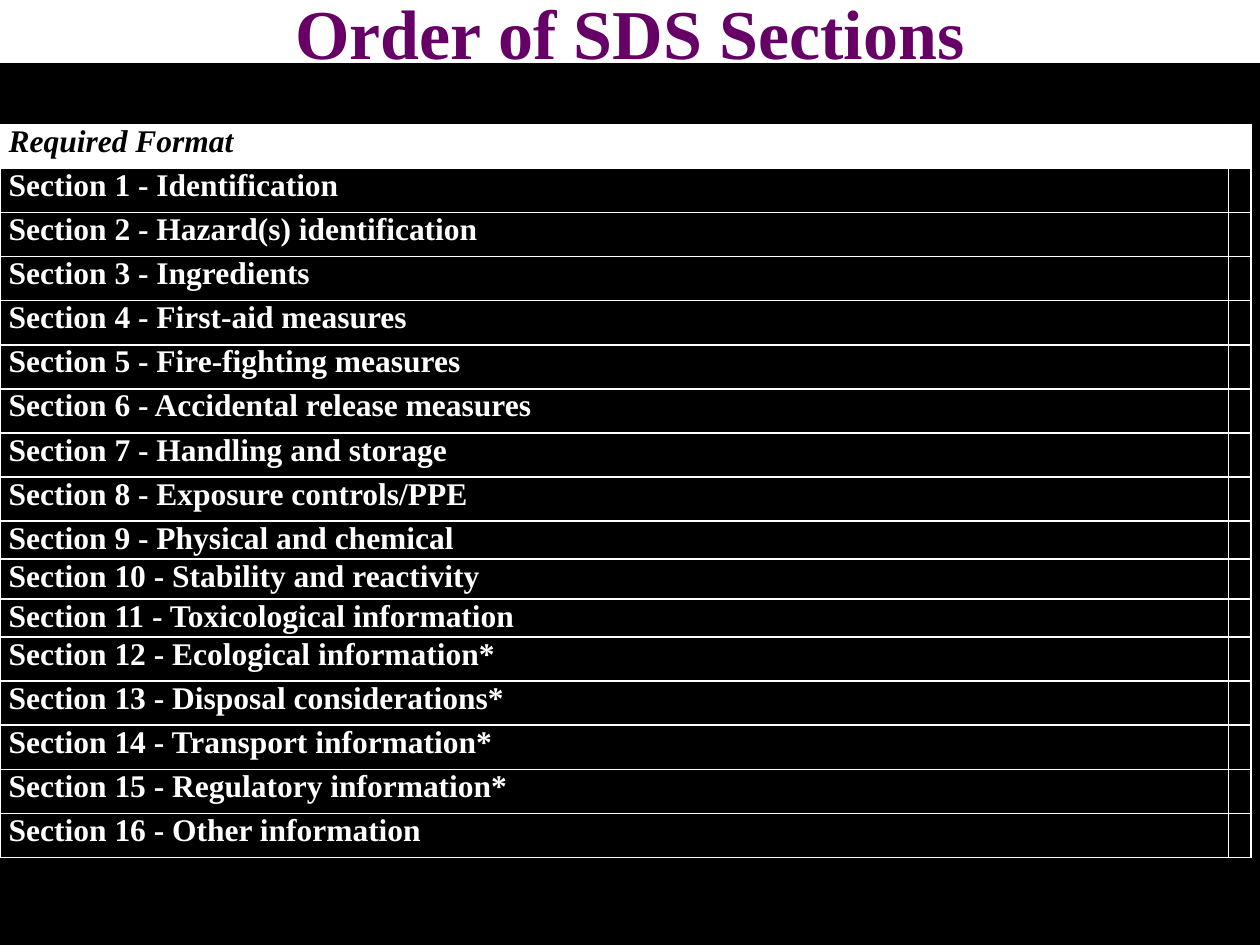
"""Build the slide that lists the order of SDS sections."""
from dataclasses import dataclass

from lxml import etree
from pptx import Presentation
from pptx.dml.color import RGBColor
from pptx.enum.shapes import MSO_SHAPE
from pptx.enum.text import MSO_ANCHOR, PP_ALIGN
from pptx.oxml.ns import qn
from pptx.util import Pt

RECTANGLE = MSO_SHAPE.RECTANGLE
MIDDLE = MSO_ANCHOR.MIDDLE
CENTER = PP_ALIGN.CENTER

SECTIONS = [
    "Identification",
    "Hazard(s) identification",
    "Ingredients",
    "First-aid measures",
    "Fire-fighting measures",
    "Accidental release measures",
    "Handling and storage",
    "Exposure controls/PPE",
    "Physical and chemical",
    "Stability and reactivity",
    "Toxicological information",
    "Ecological information*",
    "Disposal considerations*",
    "Transport information*",
    "Regulatory information*",
    "Other information",
]
ROW_HEIGHT = 25.2
TIGHT_ROWS = {9: 21.6, 10: 23, 11: 21.6}
COLUMN_WIDTHS = [702, 12.4]


@dataclass(frozen=True)
class Theme:
    font: str = "Times New Roman"
    black: str = "000000"
    white: str = "FFFFFF"
    purple: str = "660066"
    title_size: float = 40
    body_size: float = 18
    border: float = 1
    side_inset: float = 5


class SlideBuilder:
    def __init__(self, slide, theme):
        self.slide = slide
        self.theme = theme

    def paint(self, fill, color):
        fill.solid()
        fill.fore_color.rgb = RGBColor.from_string(color)

    def background(self, color):
        self.paint(self.slide.background.fill, color)

    def set_text(self, frame, text, size, color, italic=False):
        paragraph = frame.paragraphs[0]
        paragraph.text = text
        font = paragraph.font
        font.name = self.theme.font
        font.size = Pt(size)
        font.bold = True
        font.italic = italic
        font.color.rgb = RGBColor.from_string(color)
        return paragraph

    def title(self, text, width, height):
        band = self.slide.shapes.add_shape(RECTANGLE, 0, 0, Pt(width), Pt(height))
        band.shadow.inherit = False
        self.paint(band.fill, self.theme.white)
        band.line.fill.background()
        frame = band.text_frame
        frame.word_wrap = True
        frame.vertical_anchor = MIDDLE
        frame.margin_top = frame.margin_bottom = 0
        heading = self.set_text(frame, text, self.theme.title_size, self.theme.purple)
        heading.alignment = CENTER

    def borders(self, cell):
        properties = cell._tc.get_or_add_tcPr()
        for side in ("a:lnL", "a:lnR", "a:lnT", "a:lnB"):
            line = etree.SubElement(properties, qn(side), w=str(Pt(self.theme.border)))
            fill = etree.SubElement(line, qn("a:solidFill"))
            etree.SubElement(fill, qn("a:srgbClr"), val=self.theme.white)

    def cell(self, cell, text, is_header):
        theme = self.theme
        cell.margin_left = cell.margin_right = Pt(theme.side_inset)
        cell.margin_top = cell.margin_bottom = 0
        self.borders(cell)
        if is_header:
            self.paint(cell.fill, theme.white)
        else:
            cell.fill.background()
        color = theme.black if is_header else theme.white
        self.set_text(cell.text_frame, text, theme.body_size, color, italic=is_header)

    def table(self, labels, top, widths, heights):
        table = self.slide.shapes.add_table(
            len(labels), len(widths), 0, Pt(top), Pt(sum(widths)), Pt(sum(heights))
        ).table
        table.first_row = table.horz_banding = False
        for column, width in zip(table.columns, widths):
            column.width = Pt(width)
        for index, (label, height) in enumerate(zip(labels, heights)):
            table.rows[index].height = Pt(height)
            for position, text in enumerate((label, "")):
                self.cell(table.cell(index, position), text, index == 0)


def main():
    presentation = Presentation()
    presentation.slide_width = Pt(720)
    presentation.slide_height = Pt(540)
    theme = Theme()
    builder = SlideBuilder(
        presentation.slides.add_slide(presentation.slide_layouts[6]), theme
    )
    builder.background(theme.black)
    builder.title("Order of SDS Sections", 720, 36)
    labels = ["Required Format"] + [
        f"Section {number} - {name}" for number, name in enumerate(SECTIONS, 1)
    ]
    heights = [TIGHT_ROWS.get(row, ROW_HEIGHT) for row in range(len(labels))]
    builder.table(labels, 71, COLUMN_WIDTHS, heights)
    presentation.save("out.pptx")


if __name__ == "__main__":
    main()
